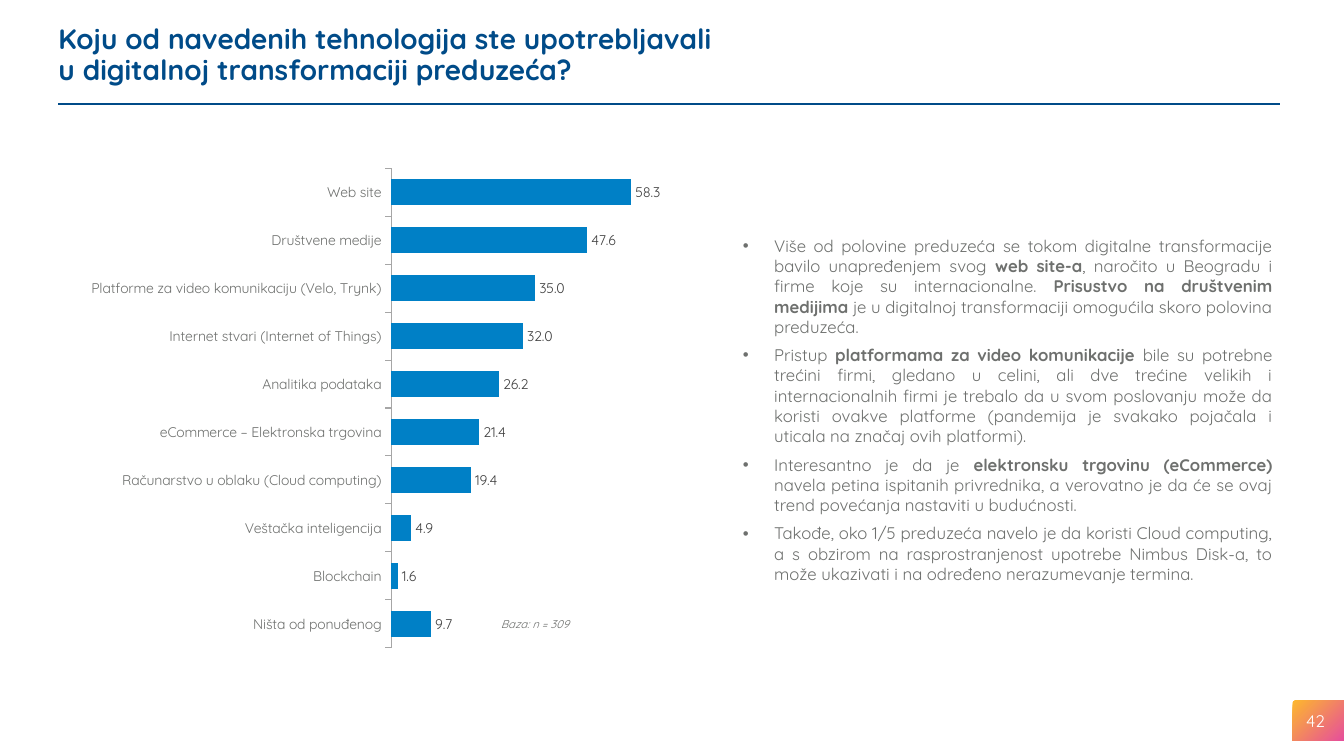
from dataclasses import dataclass

from lxml import etree
from pptx import Presentation
from pptx.chart.data import CategoryChartData
from pptx.dml.color import RGBColor
from pptx.enum.chart import XL_CHART_TYPE as ChartType, XL_LABEL_POSITION as LabelPosition
from pptx.enum.chart import XL_TICK_LABEL_POSITION as TickLabels, XL_TICK_MARK as TickMark
from pptx.enum.shapes import MSO_CONNECTOR as Connector, MSO_SHAPE as Shape
from pptx.enum.text import MSO_ANCHOR as Anchor, PP_ALIGN as Align
from pptx.oxml import parse_xml
from pptx.oxml.ns import nsdecls, qn
from pptx.util import Inches, Pt


@dataclass(frozen=True)
class Theme:
    font: str = "Quicksand"
    navy: str = "004B88"
    bar: str = "0080C6"
    gray: str = "6E706E"
    value: str = "404040"
    axis: str = "A6A6A6"
    white: str = "FFFFFF"
    amber: str = "FDB82E"
    pink: str = "E64E9C"
    title_size: int = 20
    body_size: int = 12
    chart_size: int = 10
    note_size: int = 8


TECHNOLOGIES = {
    "Web site": 58.3,
    "Društvene medije": 47.6,
    "Platforme za video komunikaciju (Velo, Trynk)": 35.0,
    "Internet stvari (Internet of Things)": 32.0,
    "Analitika podataka": 26.2,
    "eCommerce – Elektronska trgovina": 21.4,
    "Računarstvo u oblaku (Cloud computing)": 19.4,
    "Veštačka inteligencija": 4.9,
    "Blockchain": 1.6,
    "Ništa od ponuđenog": 9.7,
}

FINDINGS = [
    "Više od polovine preduzeća se tokom digitalne transformacije bavilo unapređenjem svog "
    "|web site-a|, naročito u Beogradu i firme koje su internacionalne. "
    "|Prisustvo na društvenim medijima |je u digitalnoj transformaciji omogućila "
    "skoro polovina preduzeća.",
    "Pristup |platformama za video komunikacije |bile su potrebne trećini firmi, gledano u "
    "celini, ali dve trećine velikih i internacionalnih firmi je trebalo da u svom poslovanju "
    "može da koristi ovakve platforme (pandemija je svakako pojačala i uticala na značaj ovih "
    "platformi).",
    "Interesantno je da je |elektronsku trgovinu (eCommerce) |navela petina ispitanih "
    "privrednika, a verovatno je da će se ovaj trend povećanja nastaviti u budućnosti.",
    "Takođe, oko 1/5 preduzeća navelo je da koristi Cloud computing, a s obzirom na "
    "rasprostranjenost upotrebe Nimbus Disk-a, to može ukazivati i na određeno "
    "nerazumevanje termina.",
]


class SlideBuilder:
    def __init__(self, slide, theme):
        self.shapes = slide.shapes
        self.theme = theme

    def style(self, font, size, color, bold=False, italic=False):
        font.name = self.theme.font
        font.size = Pt(size)
        font.color.rgb = RGBColor.from_string(color)
        font.bold = bold
        font.italic = italic

    def rule(self, left, top, right):
        rule = self.shapes.add_connector(
            Connector.STRAIGHT, Inches(left), Inches(top), Inches(right), Inches(top))
        rule.line.color.rgb = RGBColor.from_string(self.theme.navy)
        rule.line.width = Pt(1.5)
        etree.SubElement(rule.element.spPr, qn("a:effectLst"))

    def gradient_tile(self, *box):
        tile = self.shapes.add_shape(Shape.RECTANGLE, *map(Inches, box))
        tile.shadow.inherit = False
        tile.line.fill.background()
        tile.fill.gradient()
        tile.fill.gradient_angle = 315
        for stop, color in zip(tile.fill.gradient_stops, (self.theme.amber, self.theme.pink)):
            stop.color.rgb = RGBColor.from_string(color)

    def frame(self, box, anchor=Anchor.TOP):
        frame = self.shapes.add_textbox(*map(Inches, box)).text_frame
        frame.word_wrap = True
        frame.vertical_anchor = anchor
        return frame

    def text(self, box, text, size, color, align=Align.LEFT, anchor=Anchor.TOP,
             spacing=None, inset=0.1, bold=False, italic=False):
        frame = self.frame(box, anchor)
        frame.margin_left = Inches(inset)
        frame.text = text
        for paragraph in frame.paragraphs:
            paragraph.alignment = align
            paragraph.line_spacing = spacing
            for run in paragraph.runs:
                self.style(run.font, size, color, bold, italic)

    def bullets(self, box, items):
        frame = self.frame(box)
        for index, item in enumerate(items):
            paragraph = frame.add_paragraph() if index else frame.paragraphs[0]
            paragraph.alignment = Align.JUSTIFY
            paragraph.space_after = Pt(6)
            properties = paragraph._p.get_or_add_pPr()
            properties.set("marL", str(Inches(0.31)))
            properties.set("indent", str(Inches(-0.31)))
            etree.SubElement(properties, qn("a:buFont"), typeface="Arial")
            etree.SubElement(properties, qn("a:buChar"), char="•")
            for position, part in enumerate(item.split("|")):
                run = paragraph.add_run()
                run.text = part
                self.style(run.font, self.theme.body_size, self.theme.gray, position % 2 == 1)

    def bar_chart(self, box, values, plot_area):
        theme = self.theme
        data = CategoryChartData(number_format="#,##0.0")
        data.categories = values.keys()
        data.add_series("Series 1", values.values())
        chart = self.shapes.add_chart(
            ChartType.BAR_CLUSTERED, *map(Inches, box), data).chart
        self.style(chart.font, theme.chart_size, theme.gray)
        chart.has_legend = False
        chart.has_title = False

        categories = chart.category_axis
        categories.reverse_order = True
        categories.major_tick_mark = TickMark.OUTSIDE
        categories.minor_tick_mark = TickMark.NONE
        categories.tick_label_position = TickLabels.LOW
        categories.has_major_gridlines = False
        categories.format.line.color.rgb = RGBColor.from_string(theme.axis)
        categories.format.line.width = Pt(0.75)
        self.style(categories.tick_labels.font, theme.chart_size, theme.gray)

        scale = chart.value_axis
        scale.minimum_scale = 0
        scale.maximum_scale = 80
        scale.has_major_gridlines = False
        scale.visible = False

        plot = chart.plots[0]
        plot.gap_width = 85
        plot.vary_by_categories = False
        bars = plot.series[0]
        bars.format.fill.solid()
        bars.format.fill.fore_color.rgb = RGBColor.from_string(theme.bar)
        bars.invert_if_negative = False
        labels = bars.data_labels
        labels.show_value = True
        labels.number_format = "#,##0.0"
        labels.number_format_is_linked = False
        labels.position = LabelPosition.OUTSIDE_END
        self.style(labels.font, theme.chart_size, theme.value)

        sizes = "".join(f'<c:{key} val="{value}"/>' for key, value in zip("xywh", plot_area))
        layout = parse_xml(
            f'<c:layout {nsdecls("c")}><c:manualLayout><c:layoutTarget val="inner"/>'
            f'<c:xMode val="edge"/><c:yMode val="edge"/>{sizes}</c:manualLayout></c:layout>')
        area = chart._chartSpace.chart.plotArea
        for automatic in area.findall(qn("c:layout")):
            area.remove(automatic)
        area.insert(0, layout)


def main():
    theme = Theme()
    deck = Presentation()
    deck.slide_width, deck.slide_height = Inches(13.33), Inches(7.5)
    page = SlideBuilder(deck.slides.add_slide(deck.slide_layouts[6]), theme)

    page.rule(0.58, 1.03, 12.7)
    page.gradient_tile(12.82, 6.95, 0.51, 0.4)
    page.bar_chart((0.48, 1.45, 6.67, 5.47), TECHNOLOGIES, (0.51, 0.04, 0.49, 0.87))
    page.text((10.24, 6.95, 3, 0.4), "42", theme.body_size, theme.white,
              align=Align.RIGHT, anchor=Anchor.MIDDLE)
    page.text((4.87, 6.08, 0.98, 0.24), "Baza: n = 309", theme.note_size, theme.gray,
              italic=True)
    page.bullets((7.27, 2.29, 5.45, 3.79), FINDINGS)
    page.text((0.58, 0.16, 12.28, 0.79),
              "Koju od navedenih tehnologija ste upotrebljavali\n"
              "u digitalnoj transformaciji preduzeća?",
              theme.title_size, theme.navy, anchor=Anchor.MIDDLE, spacing=0.9, inset=0,
              bold=True)
    deck.save("out.pptx")


if __name__ == "__main__":
    main()
